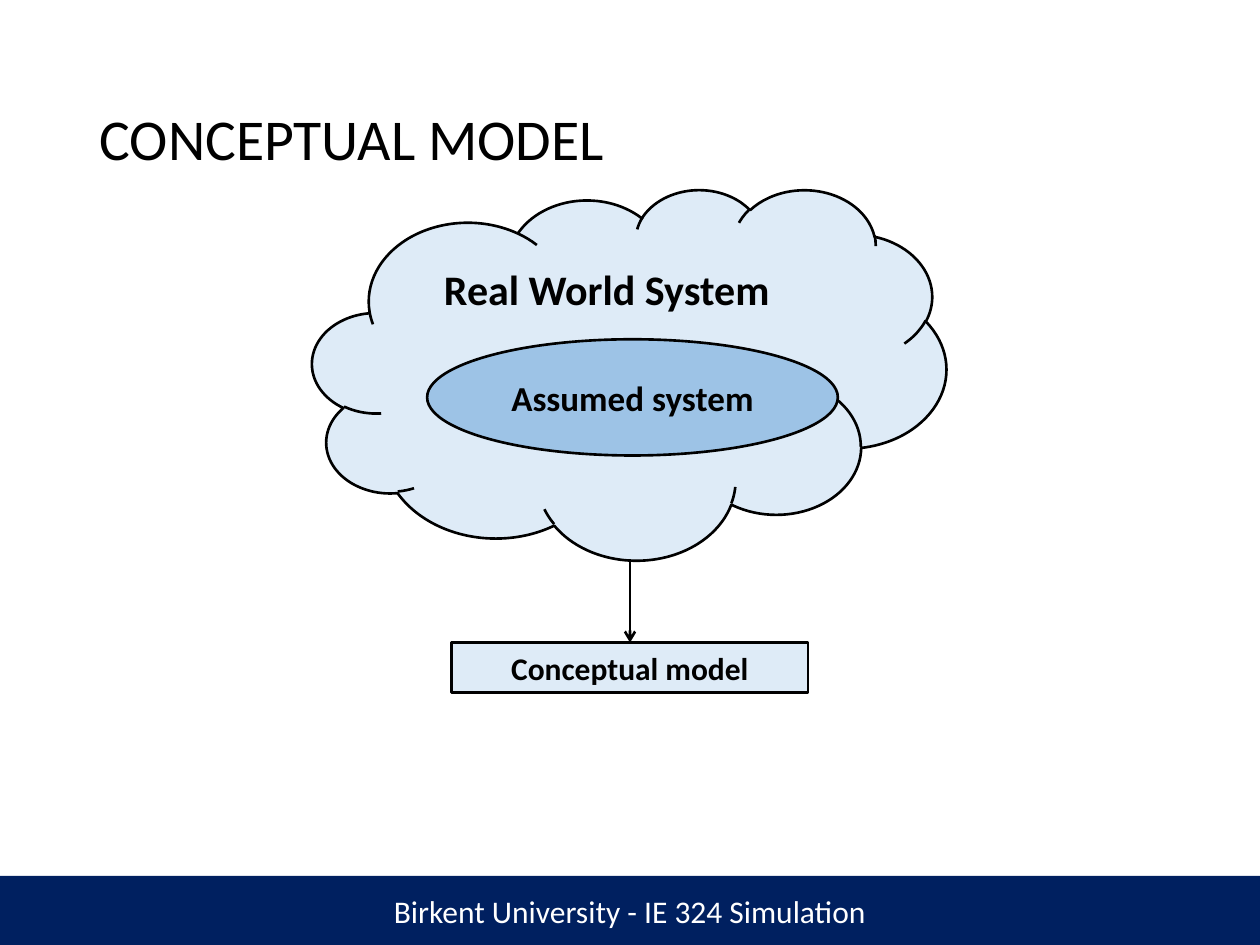
"""Builds a slide relating a real world system to its conceptual model."""
import dataclasses

import pptx
import pptx.dml.color
import pptx.enum.shapes
import pptx.enum.text
import pptx.oxml
import pptx.oxml.ns
import pptx.presentation
import pptx.shapes.autoshape
import pptx.shapes.connector
import pptx.slide
import pptx.text.text
import pptx.util

WIDTH, HEIGHT = pptx.util.Inches(10), pptx.util.Inches(7.5)
COLORS = {"ink": "000000", "paper": "FFFFFF", "navy": "002060",
          "pale": "DEEBF7", "sky": "9DC3E6"}
KINDS = pptx.enum.shapes.MSO_SHAPE
ALIGN = pptx.enum.text.PP_ALIGN
FRAME_FORMAT = {"word_wrap": True,
                "auto_size": pptx.enum.text.MSO_AUTO_SIZE.NONE,
                "vertical_anchor": pptx.enum.text.MSO_ANCHOR.MIDDLE}


@dataclasses.dataclass(frozen=True)
class Share:
    """A box given as shares of the slide's width and height."""
    left: float
    top: float
    width: float
    height: float

    def lengths(self) -> tuple[int, int, int, int]:
        """Return the box as left, top, width and height."""
        return (round(self.left * WIDTH), round(self.top * HEIGHT),
                round(self.width * WIDTH), round(self.height * HEIGHT))


@dataclasses.dataclass(frozen=True)
class Node:
    """A filled shape with a label."""
    label: str
    kind: KINDS
    box: Share
    fill: str
    size: float
    ink: str = "ink"
    bold: bool = True
    outlined: bool = True
    raised: float = 0.05


FOOTER = Node("Birkent University - IE 324 Simulation", KINDS.RECTANGLE,
              Share(0, 0.927, 1, 0.073), "navy", 18, "paper", False, False)
REAL_WORLD = Node("Real World System", KINDS.CLOUD,
                  Share(0.248, 0.2, 0.503, 0.392), "pale", 24, raised=1.27)
CONCEPT = Node("Conceptual model", KINDS.RECTANGLE,
               Share(0.3585, 0.68, 0.283, 0.053), "pale", 18)
ASSUMED = Node("Assumed system", KINDS.OVAL,
               Share(0.339, 0.359, 0.326, 0.123), "sky", 20)


def rgb(name: str) -> pptx.dml.color.RGBColor:
    """Look up a named colour."""
    return pptx.dml.color.RGBColor.from_string(COLORS[name])


def write(frame: pptx.text.text.TextFrame, label: str, size: float,
          ink: str, bold: bool, align: ALIGN) -> None:
    """Put one formatted paragraph into a text frame."""
    for name, value in FRAME_FORMAT.items():
        setattr(frame, name, value)
    frame.text = label
    paragraph = frame.paragraphs[0]
    paragraph.alignment = align
    font = paragraph.runs[0].font
    font_format = {"name": "Calibri", "size": pptx.util.Pt(size), "bold": bold}
    for name, value in font_format.items():
        setattr(font, name, value)
    font.color.rgb = rgb(ink)


def draw_title(slide: pptx.slide.Slide, label: str, box: Share) -> None:
    """Move and fill the title placeholder."""
    title = slide.shapes.title
    for name, value in zip(("left", "top", "width", "height"), box.lengths()):
        setattr(title, name, value)
    write(title.text_frame, label, 33, "ink", False, ALIGN.LEFT)
    title.text_frame.paragraphs[0].line_spacing = 0.9


def draw_node(slide: pptx.slide.Slide,
              node: Node) -> pptx.shapes.autoshape.Shape:
    """Draw a labelled shape."""
    shape = slide.shapes.add_shape(node.kind, *node.box.lengths())
    shape.shadow.inherit = False
    shape.fill.solid()
    shape.fill.fore_color.rgb = rgb(node.fill)
    if node.outlined:
        shape.line.color.rgb = rgb("ink")
        shape.line.width = pptx.util.Pt(1.5)
    else:
        shape.line.fill.background()
    write(shape.text_frame, node.label, node.size, node.ink, node.bold,
          ALIGN.CENTER)
    shape.text_frame.margin_bottom = pptx.util.Inches(node.raised)
    return shape


def draw_arrow(slide: pptx.slide.Slide, start: tuple[float, float],
               target: pptx.shapes.autoshape.Shape
               ) -> pptx.shapes.connector.Connector:
    """Draw an arrow from a point to the top of a shape."""
    x, y = round(start[0] * WIDTH), round(start[1] * HEIGHT)
    arrow = slide.shapes.add_connector(
        pptx.enum.shapes.MSO_CONNECTOR.STRAIGHT, x, y, x, target.top)
    arrow.end_connect(target, 0)
    arrow.line.color.rgb = rgb("ink")
    arrow.line.width = pptx.util.Pt(1.5)
    head = pptx.oxml.parse_xml(
        f'<a:tailEnd {pptx.oxml.ns.nsdecls("a")} type="arrow"/>')
    arrow.line._get_or_add_ln().append(head)
    arrow._element.spPr.append(pptx.oxml.parse_xml(
        f'<a:effectLst {pptx.oxml.ns.nsdecls("a")}/>'))
    return arrow


def main() -> None:
    """Build and save the slide."""
    deck = pptx.Presentation()
    deck.slide_width, deck.slide_height = WIDTH, HEIGHT
    slide = deck.slides.add_slide(deck.slide_layouts[5])
    draw_title(slide, "CONCEPTUAL MODEL", Share(0.069, 0.053, 0.862, 0.193))
    draw_node(slide, FOOTER)
    draw_node(slide, REAL_WORLD)
    concept = draw_node(slide, CONCEPT)
    draw_arrow(slide, (0.5, 0.592), concept)
    draw_node(slide, ASSUMED)
    deck.save("out.pptx")


if __name__ == "__main__":
    main()
